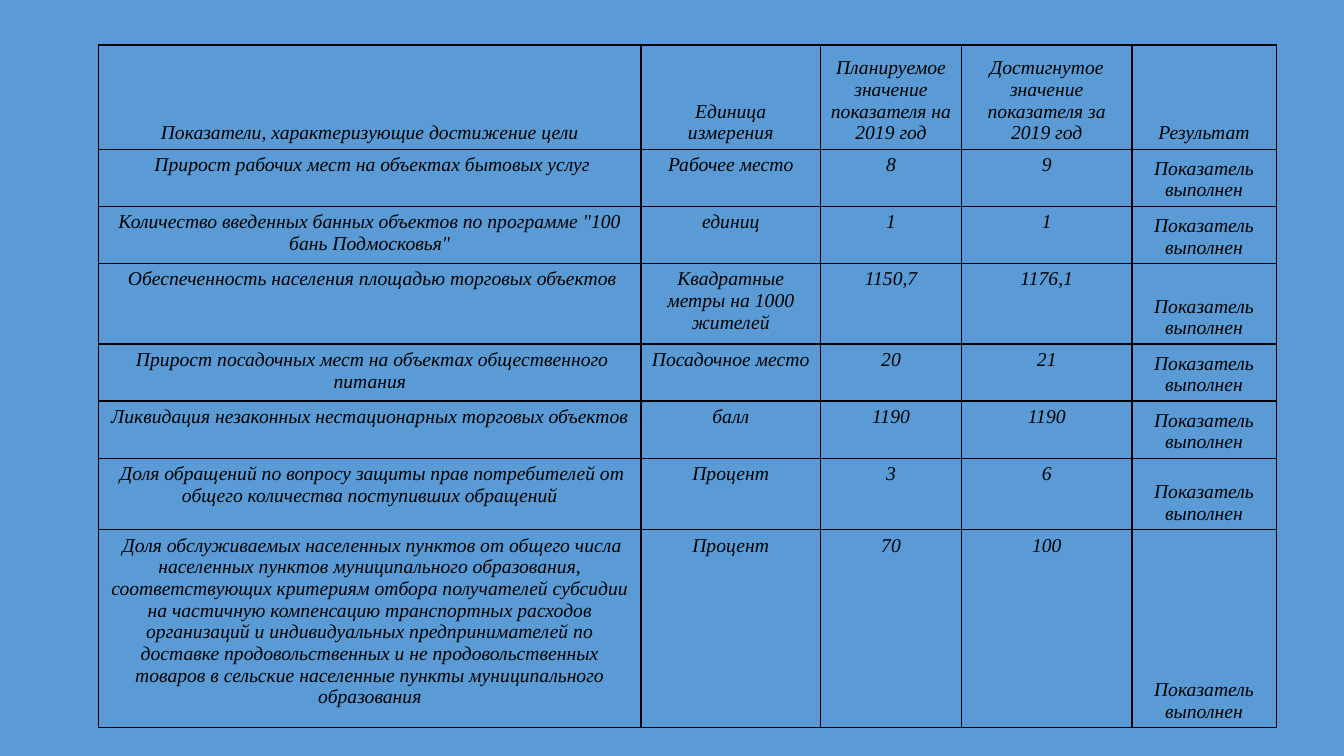
from lxml import etree
from pptx import Presentation
from pptx.dml.color import RGBColor
from pptx.enum.text import MSO_ANCHOR, PP_ALIGN
from pptx.oxml.ns import qn
from pptx.util import Pt

TOP = MSO_ANCHOR.TOP
BOTTOM = MSO_ANCHOR.BOTTOM
CENTER = PP_ALIGN.CENTER
BLUE = RGBColor(0x5B, 0x9B, 0xD5)
BLACK = RGBColor(0, 0, 0)

COLS = [387.4, 128.2, 100.8, 121.7, 103]
ROWS = [74.3, 40.8, 40.8, 57.6, 40.8, 40.8, 51, 141.6]
HEAD = [
    "Показатели, характеризующие достижение цели",
    "Единица измерения",
    "Планируемое значение показателя на 2019 год",
    "Достигнутое значение показателя за 2019 год",
    "Результат",
]
DONE = "Показатель выполнен"
GOALS = [
    (" Прирост рабочих мест на объектах бытовых услуг", "Рабочее место", "8", "9"),
    ('Количество введенных банных объектов по программе "100 бань Подмосковья"',
     "единиц", "1", "1"),
    (" Обеспеченность населения площадью торговых объектов",
     "Квадратные метры на 1000 жителей", "1150,7", "1176,1"),
    (" Прирост посадочных мест на объектах общественного питания",
     "Посадочное место", "20", "21"),
    ("Ликвидация незаконных нестационарных торговых объектов", "балл", "1190", "1190"),
    (" Доля обращений по вопросу защиты прав потребителей от общего количества "
     "поступивших обращений", "Процент", "3", "6"),
    (" Доля обслуживаемых населенных пунктов от общего числа населенных пунктов "
     "муниципального образования, соответствующих критериям отбора получателей "
     "субсидии на частичную компенсацию транспортных расходов организаций и "
     "индивидуальных предпринимателей по доставке продовольственных и не "
     "продовольственных товаров в сельские населенные пункты муниципального "
     "образования", "Процент", "70", "100"),
]


class Deck:
    font = "Times New Roman"
    size = Pt(14)
    ink = BLACK
    line = Pt(1)

    def __init__(self, slide):
        self.slide = slide

    def back(self, color):
        fill = self.slide.background.fill
        fill.solid()
        fill.fore_color.rgb = color

    def border(self, cell):
        props = cell._tc.get_or_add_tcPr()
        for spot, side in enumerate(("lnL", "lnR", "lnT", "lnB")):
            edge = etree.Element(qn("a:" + side), w=str(self.line))
            fill = etree.SubElement(edge, qn("a:solidFill"))
            etree.SubElement(fill, qn("a:srgbClr"), val=str(self.ink))
            props.insert(spot, edge)

    def cell(self, cell, text, anchor):
        cell.text_frame.text = text
        cell.vertical_anchor = anchor
        cell.fill.background()
        self.border(cell)
        para = cell.text_frame.paragraphs[0]
        para.alignment = CENTER
        font = para.runs[0].font
        font.name = self.font
        font.size = self.size
        font.italic = True
        font.color.rgb = self.ink

    def table(self, left, top, cols, rows, data):
        frame = self.slide.shapes.add_table(
            len(rows), len(cols), Pt(left), Pt(top), Pt(sum(cols)), Pt(sum(rows)))
        table = frame.table
        table.first_row = False
        table.horz_banding = False
        for col, width in zip(table.columns, cols):
            col.width = Pt(width)
        for row, height in zip(table.rows, rows):
            row.height = Pt(height)
        for r, texts in enumerate(data):
            for c, text in enumerate(texts):
                low = r == 0 or c == len(cols) - 1
                self.cell(table.cell(r, c), text, BOTTOM if low else TOP)


def main():
    show = Presentation()
    show.slide_width = Pt(960)
    show.slide_height = Pt(540)
    deck = Deck(show.slides.add_slide(show.slide_layouts[6]))
    deck.back(BLUE)
    data = [HEAD] + [[*goal, DONE] for goal in GOALS]
    deck.table(70.5, 32.2, COLS, ROWS, data)
    show.save("out.pptx")


if __name__ == "__main__":
    main()
